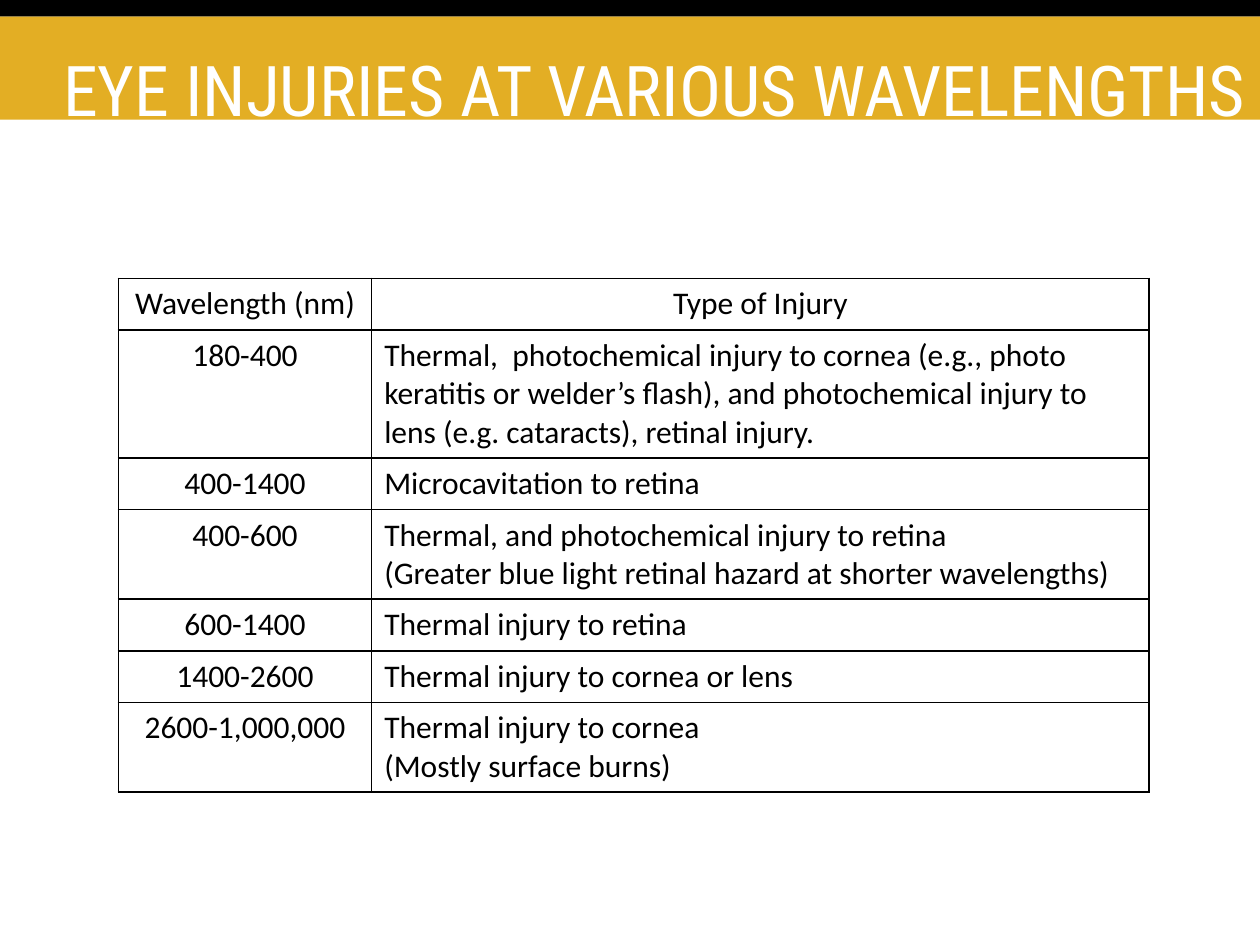
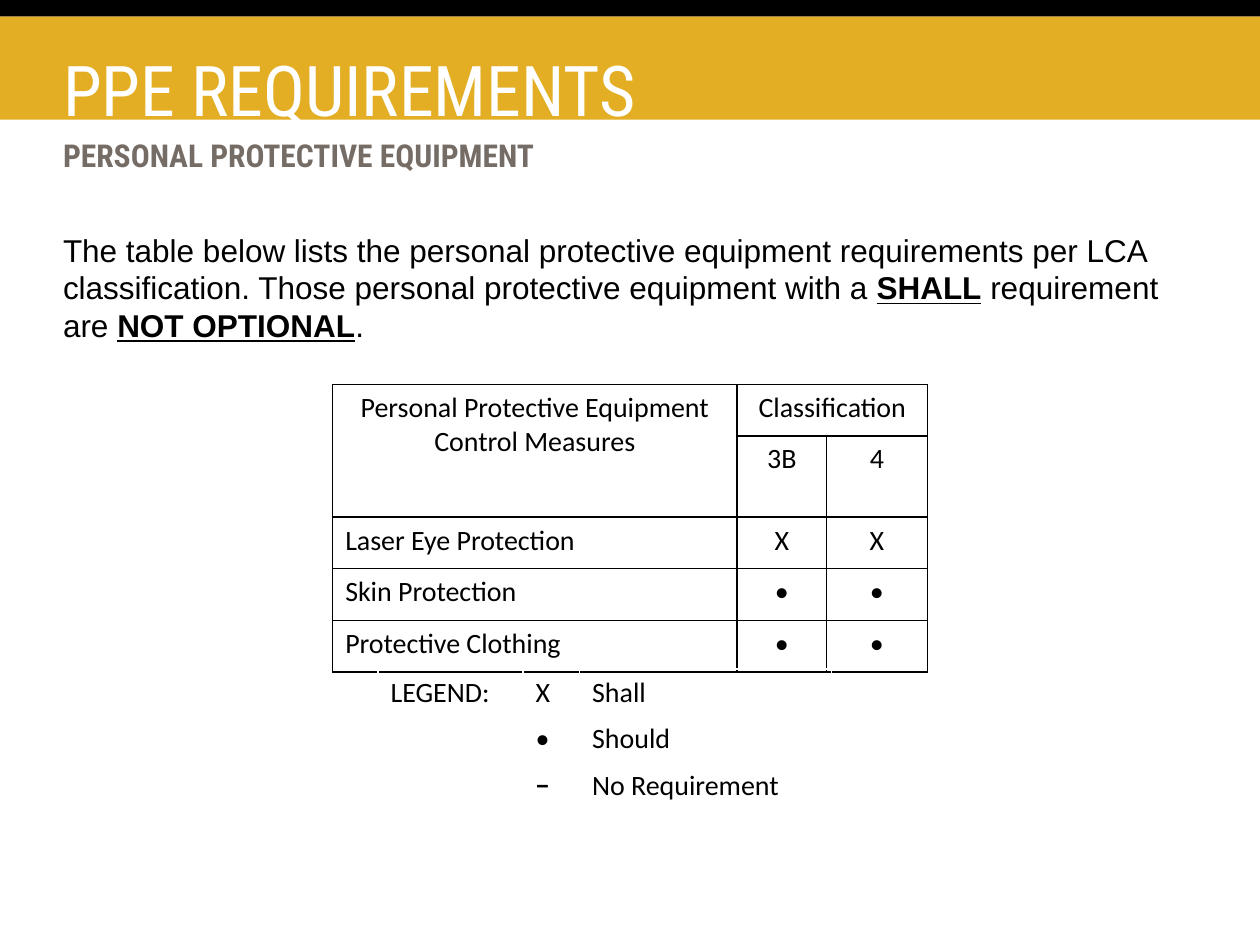
from dataclasses import dataclass
from typing import NamedTuple

from lxml.etree import SubElement
from pptx import Presentation
from pptx.dml.color import RGBColor as Rgb
from pptx.enum.shapes import MSO_SHAPE as Kind
from pptx.enum.text import MSO_ANCHOR as Anchor, MSO_AUTO_SIZE as Fit, PP_ALIGN as Align
from pptx.oxml import parse_xml
from pptx.oxml.ns import nsdecls, qn
from pptx.util import Inches, Pt


# Theme: colours, fonts and type sizes
@dataclass(frozen=True)
class Theme:
    gold: str = "E3AE24"
    black: str = "000000"
    white: str = "FFFFFF"
    gray: str = "756C66"
    head: str = "Roboto Condensed"
    body: str = "Arial"
    grid: str = "Calibri"
    title: int = 40
    text: int = 18
    small: int = 16


class Box(NamedTuple):
    """A place on a grid of 100 columns by 75 rows."""
    col: float
    row: float
    wide: float
    high: float


class Band(NamedTuple):
    box: Box
    fill: str


class Grid(NamedTuple):
    box: Box
    cols: list[float]
    rows: list[float]
    cells: list[list[str]]
    size: int
    mid: set[tuple[int, int]]
    line: bool = True


THEME = Theme()
UNIT = Inches(10) / 100
LINE, STEP = 4.1, 3  # rows for one line of table text, and for each further line
BANDS = [Band(Box(0, 1.3, 100, 8.2), THEME.gold), Band(Box(0, 0, 100, 1.3), THEME.black)]


def span(n: float) -> int:
    return round(n * UNIT)


def place(shape, box: Box) -> None:
    shape.left, shape.top, shape.width, shape.height = map(span, box)


# Text: lines split into paragraphs, and ** marks stressed words
def put(frame, text: str, *, font: str, size: int, color: str = THEME.black,
        bold: bool = False, align=Align.LEFT, glow: bool = False) -> None:
    frame.word_wrap = True
    for n, line in enumerate(text.split("\n")):
        par = frame.add_paragraph() if n else frame.paragraphs[0]
        par.alignment = align
        par.space_before = Pt(0)
        if not line:
            SubElement(par._p, qn("a:endParaRPr"), sz=str(size * 100))
            continue
        for k, part in enumerate(line.split("**")):
            run = par.add_run()
            run.text = part
            face = run.font
            face.name, face.size = font, Pt(size)
            face.bold = bold or k % 2 == 1
            face.underline = k % 2 == 1
            face.color.rgb = Rgb.from_string(color)
            if glow:
                cast(run)


def cast(run) -> None:
    """Give the letters a soft shadow."""
    fill = run._r.get_or_add_rPr().find(qn("a:solidFill"))
    fill.addnext(parse_xml(
        f'<a:effectLst {nsdecls("a")}><a:outerShdw blurRad="50800" dist="50800" '
        'dir="2700000" algn="tl"><a:srgbClr val="000000"><a:alpha val="45000"/>'
        '</a:srgbClr></a:outerShdw></a:effectLst>'))


def head(slide, text: str, wide: float) -> None:
    shape = slide.shapes.title
    place(shape, Box(4, 2.9, wide, 8.2))
    frame = shape.text_frame
    frame.auto_size, frame.vertical_anchor = Fit.NONE, Anchor.MIDDLE
    put(frame, text, font=THEME.head, size=THEME.title, color=THEME.white, glow=True)


def body(shape, box: Box, text: str, **look) -> None:
    place(shape, box)
    frame = shape.text_frame
    frame.auto_size, frame.vertical_anchor = Fit.NONE, Anchor.TOP
    frame.margin_top = Inches(0.07)
    put(frame, text, size=THEME.text, **look)


# Tables
def edge(cell) -> None:
    props = cell._tc.get_or_add_tcPr()
    for n, side in enumerate("LRTB"):
        props.insert(n, parse_xml(
            f'<a:ln{side} {nsdecls("a")} w="12700"><a:solidFill>'
            f'<a:srgbClr val="{THEME.black}"/></a:solidFill></a:ln{side}>'))


def draw(slide, grid: Grid):
    table = slide.shapes.add_table(
        len(grid.rows), len(grid.cols), *map(span, grid.box)).table
    table.first_row = table.horz_banding = False
    for col, wide in zip(table.columns, grid.cols):
        col.width = span(wide)
    for r, (row, high) in enumerate(zip(table.rows, grid.rows)):
        row.height = span(high)
        for c, cell in enumerate(row.cells):
            text = grid.cells[r][c]
            put(cell.text_frame, text, font=THEME.grid, size=grid.size, bold=text == "−",
                align=Align.CENTER if (r, c) in grid.mid else Align.LEFT)
            cell.fill.background()
            if grid.line:
                edge(cell)
    return table


# Bands shared by all slides live on the master
def dress(deck, slide) -> None:
    for n, band in enumerate(BANDS):
        shape = slide.shapes.add_shape(Kind.RECTANGLE, *map(span, band.box))
        shape.shadow.inherit = False
        shape.fill.solid()
        shape.fill.fore_color.rgb = Rgb.from_string(band.fill)
        shape.line.fill.background()
        deck.slide_master.shapes.element.insert(2 + n, shape.element)


# Slide 1: injuries by wavelength
def harm(deck):
    slide = deck.slides.add_slide(deck.slide_layouts[5])
    head(slide, "EYE INJURIES AT VARIOUS WAVELENGTHS", 97.8)
    cells = [
        ["Wavelength (nm)", "Type of Injury"],
        ["180-400", "Thermal,  photochemical injury to cornea (e.g., photo keratitis or "
         "welder’s flash), and photochemical injury to lens (e.g. cataracts), "
         "retinal injury."],
        ["400-1400", "Microcavitation to retina"],
        ["400-600", "Thermal, and photochemical injury to retina\n"
         "(Greater blue light retinal hazard at shorter wavelengths)"],
        ["600-1400", "Thermal injury to retina"],
        ["1400-2600", "Thermal injury to cornea or lens"],
        ["2600-1,000,000", "Thermal injury to cornea\n(Mostly surface burns)"],
    ]
    lines = [1, 3, 1, 2, 1, 1, 2]
    rows = [LINE + STEP * (n - 1) for n in lines]
    mid = {(r, 0) for r in range(len(cells))} | {(0, 1)}
    draw(slide, Grid(Box(9.4, 22.1, 81.8, sum(rows)), [20.1, 61.7], rows, cells,
                     THEME.text, mid))
    return slide


# Slide 2: protective equipment
def gear(deck) -> None:
    slide = deck.slides.add_slide(deck.slide_layouts[4])
    head(slide, "PPE REQUIREMENTS", 91.1)
    slots = {s.placeholder_format.idx: s for s in slide.placeholders}
    for n in (2, 4):
        slots[n].element.getparent().remove(slots[n].element)
    body(slots[1], Box(4, 10.1, 91, 4.8), "PERSONAL PROTECTIVE EQUIPMENT",
         font=THEME.head, color=THEME.gray, bold=True)
    body(slots[3], Box(4, 17.6, 91.1, 48.8),
         "The table below lists the personal protective equipment requirements per LCA "
         "classification. Those personal protective equipment with a **SHALL** "
         "requirement are **NOT OPTIONAL**.", font=THEME.body)

    cells = [
        ["Personal Protective Equipment Control Measures", "Classification", ""],
        ["", "3B", "4"],
        ["Laser Eye Protection", "X", "X"],
        ["Skin Protection", "•", "•"],
        ["Protective Clothing", "•", "•"],
    ]
    rows = [LINE, 6.4] + [LINE] * 3
    mid = {(r, c) for r in range(5) for c in (1, 2)} | {(0, 0)}
    table = draw(slide, Grid(Box(26.4, 30.5, 47.2, sum(rows)), [32.1, 7.1, 8], rows,
                             cells, THEME.small, mid))
    table.cell(0, 0).merge(table.cell(1, 0))
    table.cell(0, 1).merge(table.cell(0, 2))

    # Legend
    marks = [["LEGEND:", "X", "Shall"], ["", "•", "Should"], ["", "−", "No Requirement"]]
    draw(slide, Grid(Box(30, 53.1, 36, 11.1), [11.5, 4.5, 20], [3.7] * 3, marks,
                     THEME.small, set(), line=False))


def main() -> None:
    deck = Presentation()
    deck.slide_width, deck.slide_height = Inches(10), Inches(7.5)
    dress(deck, harm(deck))
    gear(deck)
    deck.save("out.pptx")


if __name__ == "__main__":
    main()
